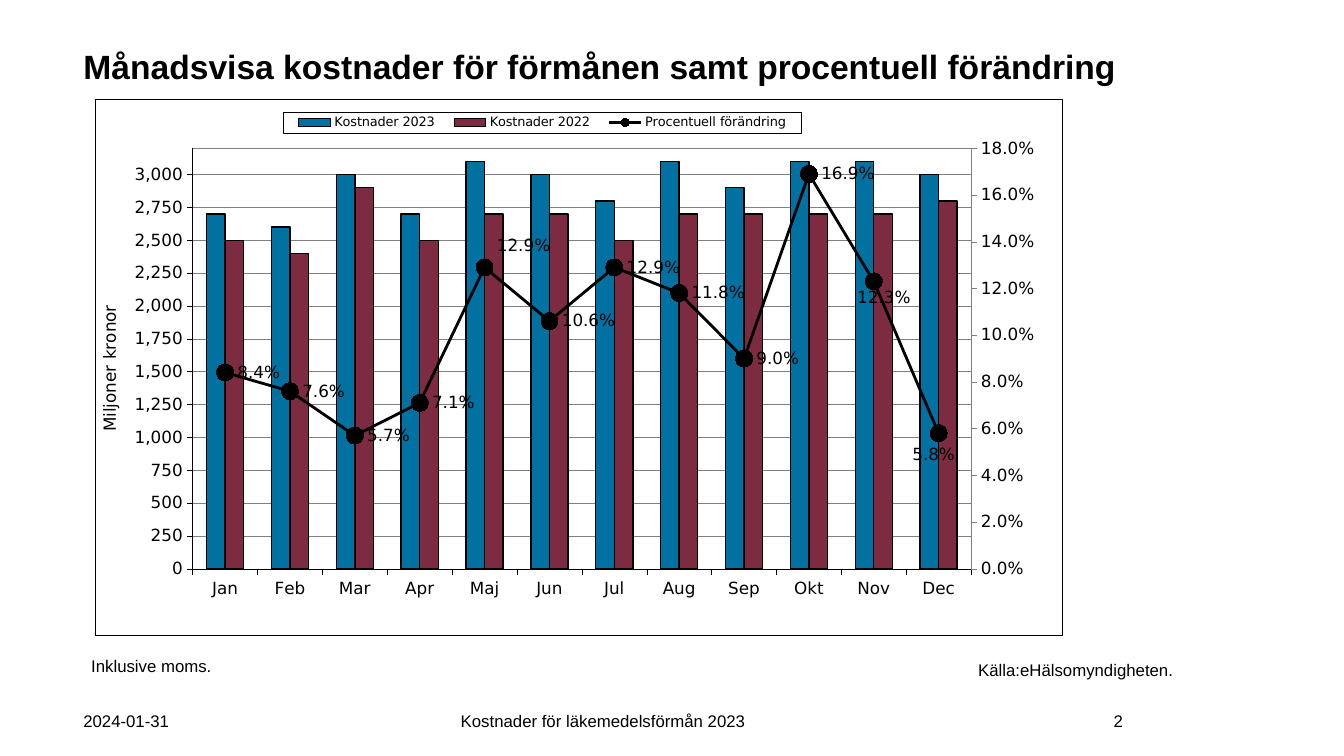
from dataclasses import dataclass

from pptx import Presentation
from pptx.chart.data import CategoryChartData
from pptx.dml.color import RGBColor
from pptx.enum.chart import (XL_CHART_TYPE, XL_LABEL_POSITION, XL_LEGEND_POSITION,
                             XL_MARKER_STYLE, XL_TICK_MARK)
from pptx.enum.text import MSO_ANCHOR, MSO_AUTO_SIZE, PP_ALIGN
from pptx.oxml import parse_xml
from pptx.oxml.ns import nsdecls
from pptx.util import Cm, Pt

COLUMN = XL_CHART_TYPE.COLUMN_CLUSTERED
BESIDE = XL_LABEL_POSITION.RIGHT
ON_TOP = XL_LEGEND_POSITION.TOP
CIRCLE = XL_MARKER_STYLE.CIRCLE
OUT = XL_TICK_MARK.OUTSIDE
LEFT, MID, RIGHT = PP_ALIGN.LEFT, PP_ALIGN.CENTER, PP_ALIGN.RIGHT
TOP, CENTRE = MSO_ANCHOR.TOP, MSO_ANCHOR.MIDDLE
FIXED = MSO_AUTO_SIZE.NONE


@dataclass(frozen=True)
class Theme:
    ink: str = "000000"
    blue: str = "0071A1"
    wine: str = "7D2B40"
    dot: str = "7D5740"
    grey: str = "808080"
    face: str = "Arial"
    plot: str = "DejaVu Sans"
    head: float = 24
    body: float = 12
    key: float = 9.2
    thin: float = 0.25


THEME = Theme()
TITLE = "Månadsvisa kostnader för förmånen samt procentuell förändring"
TITLE_BOX = (1.85, 1.1, 26.7, 1.63)
FOOT = (17.65, 1.02)
NOTES = [
    ("Inklusive moms.", (2.05, 16.41, 5.38, 0.76), LEFT, TOP),
    ("Källa:eHälsomyndigheten.", (23.75, 16.5, 6.07, 0.76), RIGHT, TOP),
    ("2024-01-31", (1.85, FOOT[0], 3.53, FOOT[1]), LEFT, CENTRE),
    ("Kostnader för läkemedelsförmån 2023", (6.83, FOOT[0], 16.74, FOOT[1]), MID, CENTRE),
    ("2", (25.02, FOOT[0], 3.53, FOOT[1]), RIGHT, CENTRE),
]
CHART_BOX = (2.39, 2.49, 24.38, 13.51)
MONTHS = ["Jan", "Feb", "Mar", "Apr", "Maj", "Jun",
          "Jul", "Aug", "Sep", "Okt", "Nov", "Dec"]
COSTS = [
    ("Kostnader 2023", THEME.blue,
     [2700, 2600, 3000, 2700, 3100, 3000, 2800, 3100, 2900, 3100, 3100, 3000]),
    ("Kostnader 2022", THEME.wine,
     [2500, 2400, 2900, 2500, 2700, 2700, 2500, 2700, 2700, 2700, 2700, 2800]),
]
CHANGE = ("Procentuell förändring",
          [0.084, 0.076, 0.057, 0.071, 0.129, 0.106,
           0.129, 0.118, 0.09, 0.169, 0.123, 0.058])
SHIFTS = {"Maj": (0, -0.04), "Nov": (-0.03, 0.03), "Dec": (-0.04, 0.04)}
PLOT_PCT = (10.1, 9.2, 80.5, 78.5)
KEY_PCT = (19.5, 2.4, 53.5, 4)
SHARE = "0.0%"


def style(font, size, face, bold=False):
    font.size, font.name, font.bold = Pt(size), face, bold
    font.color.rgb = RGBColor.from_string(THEME.ink)


def stroke(line, width, color=THEME.ink):
    line.width = Pt(width)
    line.color.rgb = RGBColor.from_string(color)


def write(frame, text, align, anchor, size, bold=False):
    frame.word_wrap = True
    frame.auto_size = FIXED
    frame.vertical_anchor = anchor
    para = frame.paragraphs[0]
    para.alignment = align
    run = para.add_run()
    run.text = text
    style(run.font, size, THEME.face, bold)
    return para


def node(tag, body):
    return parse_xml(f"<c:{tag} {nsdecls('c', 'a')}>{body}</c:{tag}>")


def place(area, inner=False):
    body = '<c:layoutTarget val="inner"/>' if inner else ""
    body += '<c:xMode val="edge"/><c:yMode val="edge"/>'
    body += "".join(f'<c:{key} val="{val / 100:.3f}"/>' for key, val in zip("xywh", area))
    return node("layout", f"<c:manualLayout>{body}</c:manualLayout>")


def border(color):
    return node("spPr", f'<a:noFill/><a:ln w="{Pt(THEME.thin)}"><a:solidFill>'
                        f'<a:srgbClr val="{color}"/></a:solidFill></a:ln>')


def split(root):
    bars = root.xpath(".//c:barChart")[0]
    trend = bars.xpath("c:ser")[-1]
    for flag in trend.xpath("c:invertIfNegative"):
        trend.remove(flag)
    group = node("lineChart", '<c:grouping val="stacked"/><c:varyColors val="0"/>'
                 '<c:marker val="1"/><c:axId val="701"/><c:axId val="702"/>')
    group.insert(2, trend)
    bars.addnext(group)
    base = ('<c:axId val="{}"/><c:scaling><c:orientation val="minMax"/>{}</c:scaling>'
            '<c:delete val="{}"/><c:axPos val="{}"/>')
    months = node("catAx", base.format(701, "", 1, "b")
                  + '<c:crossAx val="702"/><c:crosses val="autoZero"/>')
    share = node("valAx", base.format(702, '<c:max val="0.18"/><c:min val="0"/>', 0, "r")
                 + f'<c:numFmt formatCode="{SHARE}" sourceLinked="0"/>'
                 '<c:majorTickMark val="out"/><c:minorTickMark val="none"/>'
                 '<c:tickLblPos val="nextTo"/>'
                 '<c:crossAx val="701"/><c:crosses val="max"/>'
                 '<c:crossBetween val="between"/><c:majorUnit val="0.02"/>')
    share.xpath("c:tickLblPos")[0].addnext(border(THEME.grey))
    root.xpath(".//c:valAx")[0].addnext(months)
    months.addnext(share)


def frame_chart(root):
    area = root.xpath(".//c:plotArea")[0]
    key = root.xpath(".//c:legend")[0]
    for part in (area, key):
        for old in part.xpath("c:layout"):
            part.remove(old)
    area.insert(0, place(PLOT_PCT, True))
    area.append(border(THEME.grey))
    key.xpath("c:legendPos")[0].addnext(place(KEY_PCT))
    key.xpath("c:overlay")[0].addnext(border(THEME.ink))
    root.xpath("c:chart")[0].addnext(border(THEME.ink))


def draw_trend(chart):
    trend = chart.plots[1].series[0]
    trend.smooth = False
    stroke(trend.format.line, 2)
    trend.marker.style, trend.marker.size = CIRCLE, 12
    fill = trend.marker.format.fill
    fill.solid()
    fill.fore_color.rgb = RGBColor.from_string(THEME.dot)
    stroke(trend.marker.format.line, 1)
    labels = trend.data_labels
    labels.show_value = True
    labels.number_format, labels.number_format_is_linked = SHARE, False
    labels.position = BESIDE
    style(labels.font, THEME.body, THEME.plot)
    for month, (right, down) in SHIFTS.items():
        spot = MONTHS.index(month)
        label = trend.points[spot].data_label
        label.position = BESIDE
        style(label.font, THEME.body, THEME.plot)
        mark = chart.element.xpath(f".//c:dLbl/c:idx[@val='{spot}']")[0]
        mark.addnext(parse_xml(f'<c:numFmt {nsdecls("c")} formatCode="{SHARE}" sourceLinked="0"/>'))
        mark.addnext(node("layout", f'<c:manualLayout><c:x val="{right}"/>'
                                    f'<c:y val="{down}"/></c:manualLayout>'))
    for lead in chart.element.xpath(".//c:showLeaderLines"):
        lead.set("val", "0")


def draw_chart(slide):
    data = CategoryChartData()
    data.categories = MONTHS
    for name, color, costs in COSTS:
        data.add_series(name, costs, "#,##0")
    data.add_series(*CHANGE, SHARE)
    chart = slide.shapes.add_chart(COLUMN, *map(Cm, CHART_BOX), data).chart
    style(chart.font, THEME.body, THEME.plot)
    chart.has_title = False
    chart.has_legend = True
    chart.legend.position = ON_TOP
    chart.legend.include_in_layout = False
    style(chart.legend.font, THEME.key, THEME.plot)
    bars = chart.plots[0]
    bars.gap_width, bars.overlap, bars.vary_by_categories = 150, 0, False
    for series, (name, color, costs) in zip(bars.series, COSTS):
        series.format.fill.solid()
        series.format.fill.fore_color.rgb = RGBColor.from_string(color)
        stroke(series.format.line, 1)
    for axis in (chart.category_axis, chart.value_axis):
        axis.major_tick_mark = OUT
        style(axis.tick_labels.font, THEME.body, THEME.plot)
        stroke(axis.format.line, THEME.thin)
    axis.minimum_scale, axis.maximum_scale, axis.major_unit = 0, 3200, 250
    axis.tick_labels.number_format = "#,##0"
    axis.tick_labels.number_format_is_linked = False
    axis.has_major_gridlines = True
    stroke(axis.major_gridlines.format.line, THEME.thin, THEME.grey)
    run = axis.axis_title.text_frame.paragraphs[0].add_run()
    run.text = "Miljoner kronor"
    style(run.font, THEME.body, THEME.plot)
    split(chart.element)
    draw_trend(chart)
    frame_chart(chart.element)


def main():
    deck = Presentation()
    deck.slide_width, deck.slide_height = Cm(33.87), Cm(19.05)
    slide = deck.slides.add_slide(deck.slide_layouts[5])
    title = slide.shapes.title
    title.left, title.top, title.width, title.height = map(Cm, TITLE_BOX)
    write(title.text_frame, TITLE, LEFT, TOP, THEME.head, True).line_spacing = 0.95
    for text, box, align, anchor in NOTES:
        note = slide.shapes.add_textbox(*map(Cm, box))
        write(note.text_frame, text, align, anchor, THEME.body)
    draw_chart(slide)
    deck.save("out.pptx")


if __name__ == "__main__":
    main()
